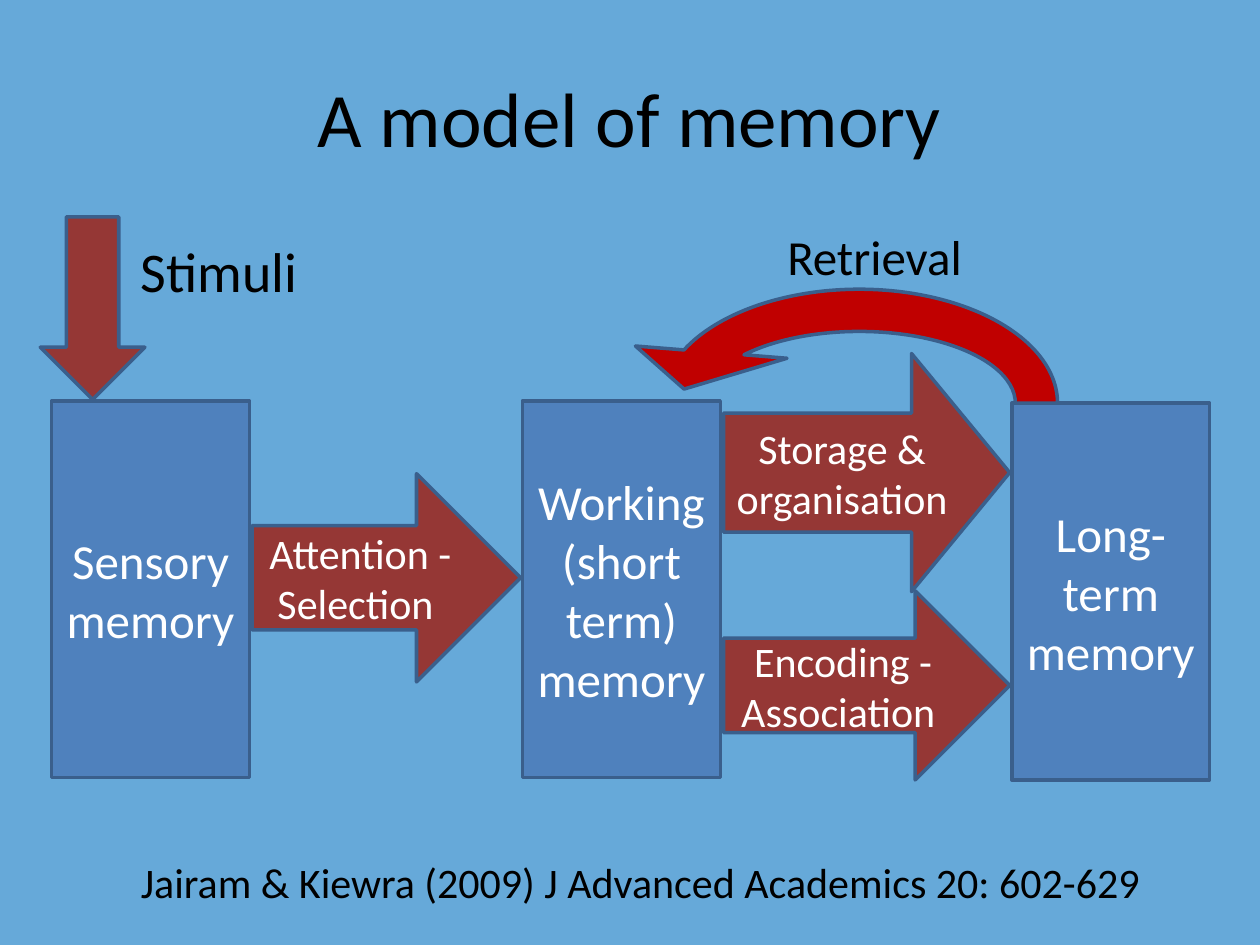
from dataclasses import dataclass

from pptx import Presentation
from pptx.dml.color import RGBColor
from pptx.enum.shapes import MSO_SHAPE as Preset
from pptx.enum.text import MSO_ANCHOR as Anchor, MSO_AUTO_SIZE as AutoSize, PP_ALIGN as Align
from pptx.oxml.ns import qn
from pptx.util import Pt


@dataclass(frozen=True)
class Theme:
    font: str = "Calibri"
    background: str = "66A9D9"
    ink: str = "000000"
    light: str = "FFFFFF"
    store: str = "4F81BD"
    process: str = "953735"
    recall: str = "C00000"
    outline: str = "3A5F8C"
    outline_width: float = 2
    title_size: int = 44
    lead_size: int = 32
    store_size: int = 28
    small_size: int = 24


class MemorySlide:
    def __init__(self, deck, theme):
        self.theme = theme
        self.slide = deck.slides.add_slide(deck.slide_layouts[6])
        fill = self.slide.background.fill
        fill.solid()
        fill.fore_color.rgb = RGBColor.from_string(theme.background)

    def set_text(self, frame, lines, size, color, align):
        frame.text = "\n".join(lines)
        for paragraph in frame.paragraphs:
            paragraph.alignment = align
            paragraph.font.name = self.theme.font
            paragraph.font.size = Pt(size)
            paragraph.font.color.rgb = RGBColor.from_string(color)

    def shape(self, preset, box, color, lines=(), size=0, adjust=()):
        shape = self.slide.shapes.add_shape(preset, *map(Pt, box))
        shape.shadow.inherit = False
        shape.fill.solid()
        shape.fill.fore_color.rgb = RGBColor.from_string(color)
        shape.line.color.rgb = RGBColor.from_string(self.theme.outline)
        shape.line.width = Pt(self.theme.outline_width)
        for index, value in enumerate(adjust):
            shape.adjustments[index] = value
        if lines:
            shape.text_frame.vertical_anchor = Anchor.MIDDLE
            self.set_text(shape.text_frame, lines, size, self.theme.light, Align.CENTER)
        return shape

    def store(self, left, top, *lines):
        self.shape(Preset.RECTANGLE, (left, top, 113.04, 215.28),
                   self.theme.store, lines, self.theme.store_size)

    def process(self, box, *lines, adjust=()):
        return self.shape(Preset.RIGHT_ARROW, box, self.theme.process,
                          lines, self.theme.small_size, adjust)

    def recall(self, box, adjust):
        arrow = self.shape(Preset.CIRCULAR_ARROW, box, self.theme.recall, adjust=adjust)
        arrow.element.spPr.find(qn("a:xfrm")).set("flipH", "1")

    def title(self, box, text):
        frame = self.slide.shapes.add_textbox(*map(Pt, box)).text_frame
        frame.word_wrap = True
        frame.vertical_anchor = Anchor.MIDDLE
        self.set_text(frame, [text], self.theme.title_size, self.theme.ink, Align.CENTER)

    def label(self, box, text, size):
        frame = self.slide.shapes.add_textbox(*map(Pt, box)).text_frame
        frame.word_wrap = False
        frame.auto_size = AutoSize.SHAPE_TO_FIT_TEXT
        self.set_text(frame, [text], size, self.theme.ink, Align.LEFT)


def main():
    deck = Presentation()
    deck.slide_width, deck.slide_height = Pt(720), Pt(540)
    theme = Theme()
    memory = MemorySlide(deck, theme)

    memory.title((36, 21.6, 648, 90), "A model of memory")
    memory.store(578.2, 230.4, "Long-term memory")
    memory.store(298.6, 229, "Working", "(short term) memory")
    memory.process((413.5, 202, 163.5, 136.1), "Storage & organisation ", adjust=(0.5, 0.412))
    memory.process((413.5, 337.7, 163.5, 108), "Encoding - Association ")
    memory.process((144, 270.7, 153.5, 119), "Attention - Selection ")
    memory.recall((346.3, 133.9, 289.4, 193), (0.125, 8.652, 204.577, 108, 0.225))
    memory.label((442.8, 126, 115.2, 41), "Retrieval", theme.store_size)
    memory.store(29.5, 229, "Sensory memory")
    stimulus = memory.process((0.7, 146.2, 104.4, 59.8))
    stimulus.rotation = 90
    memory.label((73.4, 131.8, 105.8, 46), "Stimuli", theme.lead_size)
    memory.label((73.4, 486, 590.4, 36),
                 "Jairam & Kiewra (2009) J Advanced Academics 20: 602-629", theme.small_size)

    deck.save("out.pptx")


if __name__ == "__main__":
    main()
